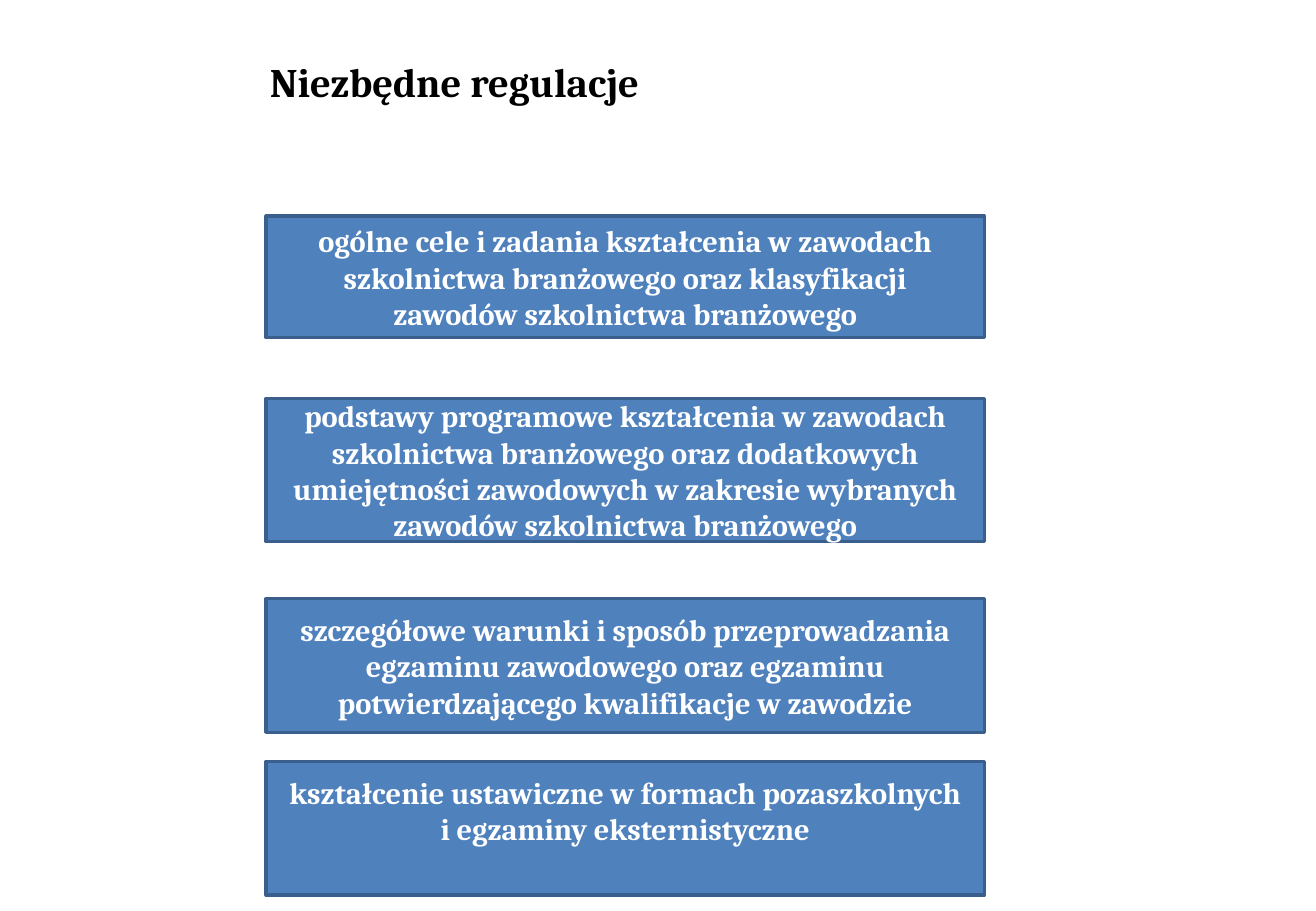
import dataclasses

import pptx
import pptx.dml.color
import pptx.enum.shapes
import pptx.enum.text
import pptx.util


@dataclasses.dataclass(frozen=True)
class Theme:
    font: str = "Cambria"
    title_size: int = 24
    regulation_size: int = 18
    title_color: str = "000000"
    regulation_color: str = "FFFFFF"
    fill: str = "4F81BD"
    border: str = "3A5F8C"
    border_width: int = 2


THEME = Theme()
SLIDE_WIDTH, SLIDE_HEIGHT = 10.83, 7.5
TITLE_BOX = (2.12, 0.16, 8.55, 1.02)
COLUMN_LEFT, COLUMN_WIDTH = 2.19, 5.91
INSET = 0.05
LINE_HEIGHT = 0.3

REGULATIONS = [
    (1.78, 1.0, 0, "ogólne cele i zadania kształcenia w zawodach szkolnictwa "
     "branżowego oraz klasyfikacji zawodów szkolnictwa branżowego"),
    (3.28, 1.18, 0, "podstawy programowe kształcenia w zawodach szkolnictwa "
     "branżowego oraz dodatkowych umiejętności zawodowych w zakresie "
     "wybranych zawodów szkolnictwa branżowego"),
    (4.93, 1.1, 0, "szczegółowe warunki i sposób przeprowadzania egzaminu "
     "zawodowego oraz egzaminu potwierdzającego kwalifikacje w zawodzie"),
    (6.27, 1.1, 1, "kształcenie ustawiczne w formach pozaszkolnych\n"
     "i egzaminy eksternistyczne"),
]


def rgb(value):
    return pptx.dml.color.RGBColor.from_string(value)


def write(frame, text, *, size, color, align, free_lines=0):
    frame.text = text
    frame.word_wrap = True
    frame.auto_size = pptx.enum.text.MSO_AUTO_SIZE.NONE
    frame.vertical_anchor = pptx.enum.text.MSO_ANCHOR.MIDDLE
    frame.margin_top = pptx.util.Inches(INSET)
    frame.margin_bottom = pptx.util.Inches(INSET + free_lines * LINE_HEIGHT)
    for paragraph in frame.paragraphs:
        paragraph.alignment = align
        for run in paragraph.runs:
            run.font.name = THEME.font
            run.font.size = pptx.util.Pt(size)
            run.font.bold = True
            run.font.color.rgb = rgb(color)


def place_title(slide, box):
    title = slide.shapes.title
    title.left, title.top, title.width, title.height = map(pptx.util.Inches, box)
    write(title.text_frame, "Niezbędne regulacje", size=THEME.title_size,
          color=THEME.title_color, align=pptx.enum.text.PP_ALIGN.LEFT)


def add_regulation(slide, box, text, free_lines):
    regulation = slide.shapes.add_shape(
        pptx.enum.shapes.MSO_SHAPE.RECTANGLE, *map(pptx.util.Inches, box))
    regulation.shadow.inherit = False
    regulation.fill.solid()
    regulation.fill.fore_color.rgb = rgb(THEME.fill)
    regulation.line.color.rgb = rgb(THEME.border)
    regulation.line.width = pptx.util.Pt(THEME.border_width)
    write(regulation.text_frame, text, size=THEME.regulation_size,
          color=THEME.regulation_color, align=pptx.enum.text.PP_ALIGN.CENTER,
          free_lines=free_lines)


def add_regulations(slide, left, width):
    for top, height, free_lines, text in REGULATIONS:
        add_regulation(slide, (left, top, width, height), text, free_lines)


def main():
    deck = pptx.Presentation()
    deck.slide_width = pptx.util.Inches(SLIDE_WIDTH)
    deck.slide_height = pptx.util.Inches(SLIDE_HEIGHT)
    slide = deck.slides.add_slide(deck.slide_layouts.get_by_name("Title Only"))
    place_title(slide, TITLE_BOX)
    add_regulations(slide, COLUMN_LEFT, COLUMN_WIDTH)
    deck.save("out.pptx")


if __name__ == "__main__":
    main()
